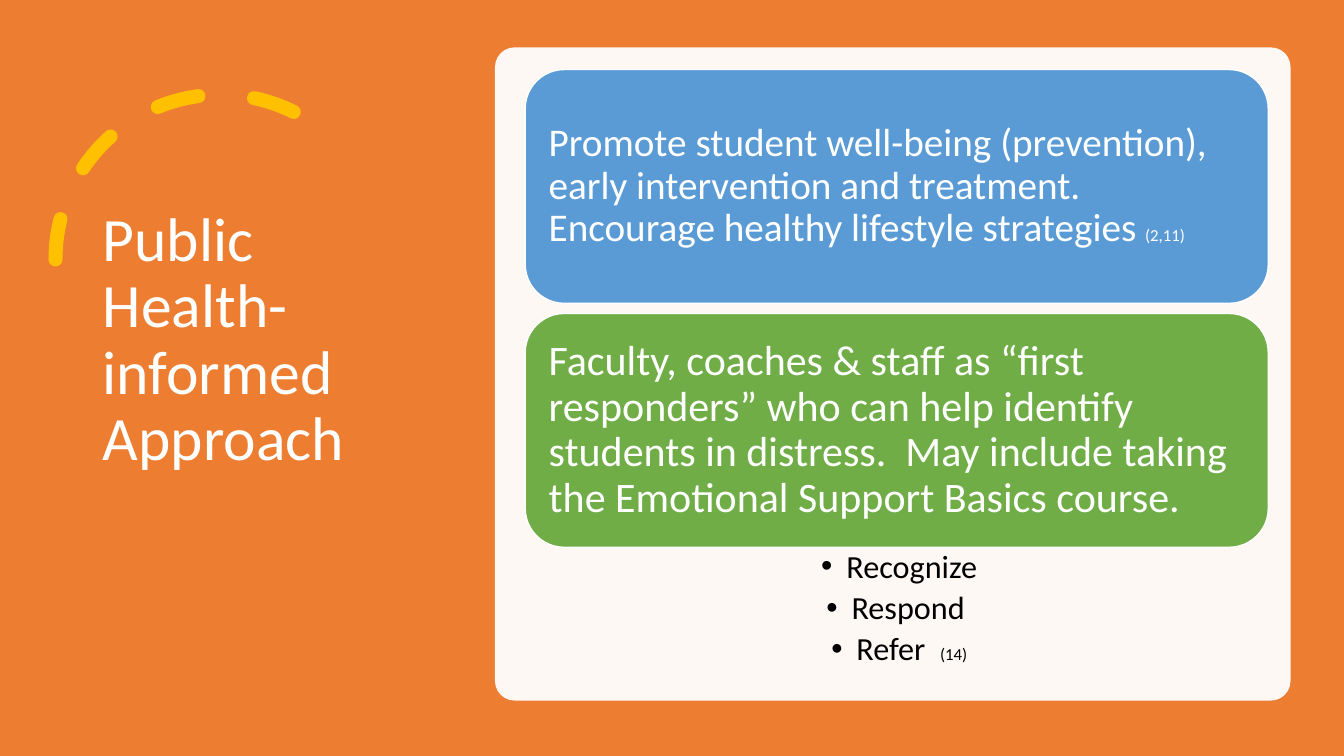
from dataclasses import dataclass

from lxml.etree import SubElement
from pptx import Presentation
from pptx.dml.color import RGBColor as Rgb
from pptx.enum.dml import MSO_LINE as Dash
from pptx.enum.shapes import MSO_SHAPE as Kind
from pptx.enum.text import MSO_ANCHOR as Anchor, MSO_AUTO_SIZE as Fit, PP_ALIGN as Align
from pptx.oxml.ns import qn
from pptx.util import Emu, Inches, Pt

HUES = {
    "orange": "ED7D31",
    "gold": "FFC000",
    "white": "FFFFFF",
    "blue": "5B9BD5",
    "green": "70AD47",
    "black": "000000",
}
FONT = "Calibri"
WIDE, HIGH = Inches(13.33), Inches(7.5)


@dataclass(frozen=True)
class Box:
    left: float
    top: float
    width: float
    height: float

    def spread(self) -> tuple[Emu, ...]:
        parts = (self.left, self.top, self.width, self.height)
        return tuple(Emu(round(part * side / 100)) for part, side in zip(parts, (WIDE, HIGH) * 2))


@dataclass(frozen=True)
class Card:
    hue: str
    size: int
    text: str
    note: str = ""


CARDS = [
    Card("blue", 28, "Promote student well-being (prevention), early intervention and treatment. "
         "Encourage healthy lifestyle strategies ", "(2,11)"),
    Card("green", 30, "Faculty, coaches & staff as “first responders” who can help identify "
         "students in distress.  May include taking the Emotional Support Basics course."),
]
STEPS = [("Recognize", ""), ("Respond ", ""), ("Refer  ", "(14)")]
CARD_BOX = Box(39.08, 9.2, 55.29, 30.93)
CARD_STEP = 32.27


def hue(name: str) -> Rgb:
    return Rgb.from_string(HUES[name])


def draw(slide, kind: Kind, box: Box, fill: str = ""):
    shape = slide.shapes.add_shape(kind, *box.spread())
    shape.shadow.inherit = False
    if fill:
        shape.fill.solid()
        shape.fill.fore_color.rgb = hue(fill)
    else:
        shape.fill.background()
    shape.line.fill.background()
    return shape


def place(slide, shape, box: Box) -> None:
    shape.left, shape.top, shape.width, shape.height = box.spread()
    shape.text_frame.auto_size = Fit.NONE
    shape.text_frame.word_wrap = True
    slide.shapes._spTree.append(shape._element)


def inset(frame, left: float, top: float, right: float, base: float) -> None:
    frame.margin_left, frame.margin_top = Inches(left), Inches(top)
    frame.margin_right, frame.margin_bottom = Inches(right), Inches(base)


def write(para, text: str, note: str, size: int, tint: str, align: Align, after: float) -> None:
    para.alignment = align
    para.line_spacing = 0.9
    para.space_before = Pt(0)
    para.space_after = Pt(after)
    para.font.name = FONT
    para.font.size = Pt(size)
    para.font.color.rgb = hue(tint)
    for part, points in ((text, size), (note, 12)):
        if part:
            run = para.add_run()
            run.text = part
            run.font.name = FONT
            run.font.size = Pt(points)
            run.font.color.rgb = hue(tint)


def add_arc(slide) -> None:
    arc = draw(slide, Kind.ARC, Box(4.13, 12.53, 24.53, 43.6))
    arc.adjustments[0] = 146.13
    arc.adjustments[1] = 0
    arc._element.spPr.find(qn("a:xfrm")).set("flipH", "1")
    arc.line.color.rgb = hue("gold")
    arc.line.width = Pt(10)
    arc.line.dash_style = Dash.DASH
    arc._element.spPr.find(qn("a:ln")).set("cap", "rnd")


def add_panel(slide) -> None:
    panel = draw(slide, Kind.ROUNDED_RECTANGLE, Box(36.83, 6.27, 59.19, 86.4), "white")
    panel.adjustments[0] = 0.03
    tint = panel._element.spPr.find(qn("a:solidFill"))[0]
    SubElement(tint, qn("a:alpha")).set("val", "95000")


def add_title(slide) -> None:
    title = slide.shapes.title
    place(slide, title, Box(6.9, 9.33, 24.23, 81.2))
    frame = title.text_frame
    frame.vertical_anchor = Anchor.MIDDLE
    inset(frame, 0.1, 0.05, 0.1, 0.77)
    write(frame.paragraphs[0], "Public Health-informed Approach", "", 44, "white", Align.LEFT, 0)


def add_card(slide, card: Card, row: int) -> None:
    box = Box(CARD_BOX.left, CARD_BOX.top + row * CARD_STEP, CARD_BOX.width, CARD_BOX.height)
    shape = draw(slide, Kind.ROUNDED_RECTANGLE, box, card.hue)
    shape.line.color.rgb = hue("white")
    shape.line.width = Pt(1)
    frame = shape.text_frame
    frame.word_wrap = True
    frame.vertical_anchor = Anchor.MIDDLE
    inset(frame, 0.12, 0.12, 0.12, 0.12)
    write(frame.paragraphs[0], card.text, card.note, card.size, "white", Align.LEFT, card.size * 0.35)


def add_steps(slide) -> None:
    body = slide.placeholders[1]
    place(slide, body, Box(CARD_BOX.left, 72.4, CARD_BOX.width, 17.2))
    frame = body.text_frame
    frame.vertical_anchor = Anchor.TOP
    inset(frame, 0.23, 0.03, 0.18, 0.03)
    for row, (text, note) in enumerate(STEPS):
        para = frame.add_paragraph() if row else frame.paragraphs[0]
        para.level = 1
        props = para._p.get_or_add_pPr()
        props.set("marL", str(Inches(0.25)))
        props.set("indent", str(-Inches(0.25)))
        SubElement(props, qn("a:buFont")).set("typeface", "Arial")
        SubElement(props, qn("a:buChar")).set("char", "•")
        write(para, text, note, 23, "black", Align.CENTER, 4.6)


def main() -> None:
    deck = Presentation()
    deck.slide_width, deck.slide_height = WIDE, HIGH
    slide = deck.slides.add_slide(deck.slide_layouts[1])
    draw(slide, Kind.RECTANGLE, Box(0, 0, 100, 100), "orange")
    add_arc(slide)
    add_title(slide)
    add_panel(slide)
    for row, card in enumerate(CARDS):
        add_card(slide, card, row)
    add_steps(slide)
    deck.save("out.pptx")


if __name__ == "__main__":
    main()
